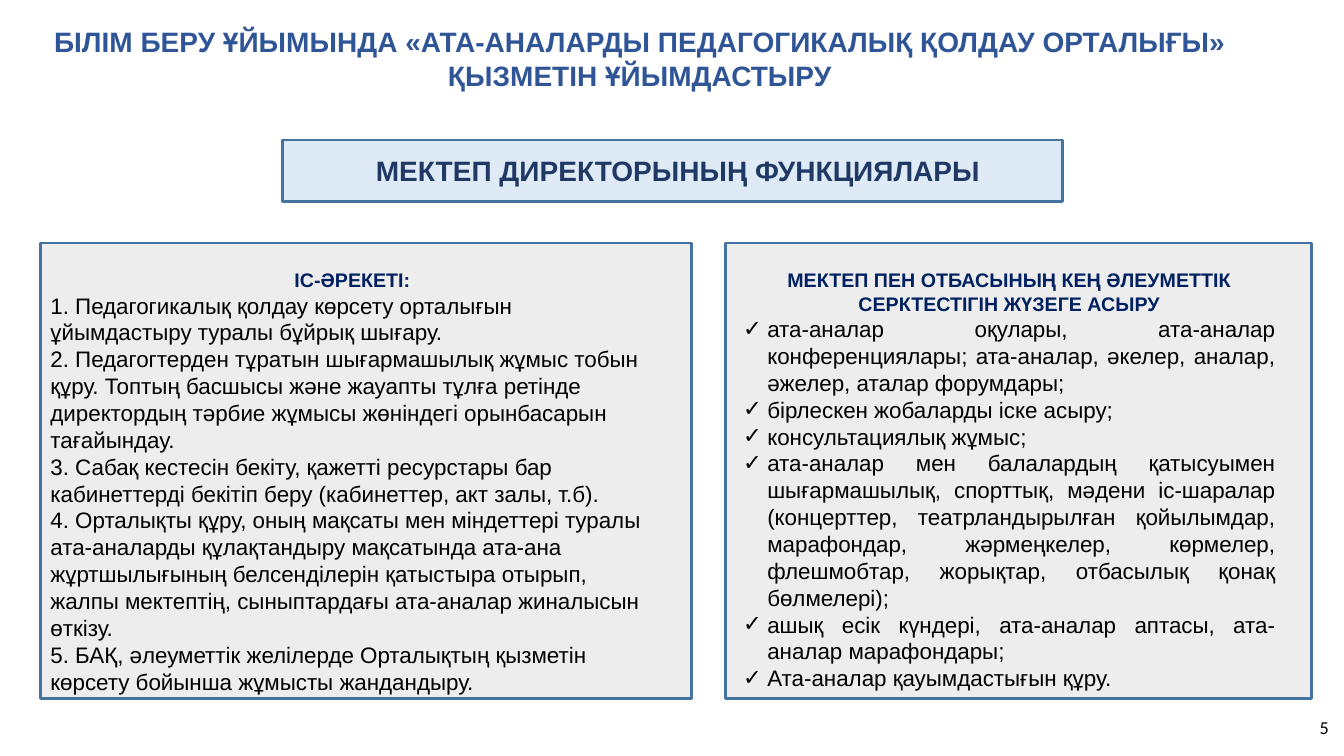
from dataclasses import dataclass
from lxml.etree import SubElement
from pptx import Presentation
from pptx.dml.color import RGBColor
from pptx.enum.shapes import MSO_SHAPE
from pptx.enum.text import MSO_ANCHOR, MSO_AUTO_SIZE, PP_ALIGN
from pptx.oxml.ns import qn
from pptx.util import Inches, Pt

TITLE_BLUE = RGBColor(0x2F, 0x55, 0x97)
BANNER_NAVY = RGBColor(0x20, 0x38, 0x64)
HEADING_NAVY = RGBColor(0x00, 0x20, 0x60)
BLACK = RGBColor(0x00, 0x00, 0x00)
BANNER_FILL = RGBColor(0xDE, 0xEB, 0xF7)
CARD_FILL = RGBColor(0xED, 0xED, 0xED)
BORDER = RGBColor(0x43, 0x73, 0x9E)

SLIDE_W, SLIDE_H = Inches(13.33), Inches(7.5)
CARD_TOP, CARD_H = 32.13, 60.27
LIST_TOP, LIST_H = 34.8, 58.4
BULLET_INDENT = Inches(0.24)


@dataclass(frozen=True)
class Area:
    """Left, top, width and height in percent of the slide."""
    x: float
    y: float
    w: float
    h: float

    def box(self) -> tuple[int, int, int, int]:
        return (int(SLIDE_W * self.x / 100), int(SLIDE_H * self.y / 100),
                int(SLIDE_W * self.w / 100), int(SLIDE_H * self.h / 100))


@dataclass(frozen=True)
class Style:
    size: int
    color: RGBColor
    bold: bool = False
    font: str = "Arial"
    align: PP_ALIGN = PP_ALIGN.LEFT


@dataclass(frozen=True)
class Column:
    card: Area
    text: Area
    heading: str
    items: tuple[str, ...]
    bullet: str = ""


TITLE = Style(20, TITLE_BLUE, True, align=PP_ALIGN.CENTER)
BANNER = Style(20, BANNER_NAVY, True)
HEADING = Style(14, HEADING_NAVY, True, align=PP_ALIGN.CENTER)
STEP = Style(16, BLACK)
CHECK = Style(16, BLACK, align=PP_ALIGN.JUSTIFY)
NUMBER = Style(13, BLACK, font="Calibri", align=PP_ALIGN.RIGHT)

COLUMNS = (
    Column(
        Area(3, CARD_TOP, 48.46, CARD_H), Area(3, LIST_TOP, 46.44, LIST_H),
        "ІС-ӘРЕКЕТІ:",
        ("1. Педагогикалық қолдау көрсету орталығын ұйымдастыру туралы бұйрық шығару.",
         "2. Педагогтерден тұратын шығармашылық жұмыс тобын құру. Топтың басшысы "
         "және жауапты тұлға ретінде директордың тәрбие жұмысы жөніндегі "
         "орынбасарын тағайындау.",
         "3. Сабақ кестесін бекіту, қажетті ресурстары бар кабинеттерді бекітіп "
         "беру (кабинеттер, акт залы, т.б).",
         "4. Орталықты құру, оның мақсаты мен міндеттері туралы ата-аналарды "
         "құлақтандыру мақсатында ата-ана жұртшылығының белсенділерін қатыстыра "
         "отырып, жалпы мектептің, сыныптардағы ата-аналар жиналысын өткізу.",
         "5. БАҚ, әлеуметтік желілерде Орталықтың қызметін көрсету бойынша "
         "жұмысты жандандыру.")),
    Column(
        Area(54.01, CARD_TOP, 43.59, CARD_H), Area(54.54, LIST_TOP, 41.11, LIST_H),
        "МЕКТЕП ПЕН ОТБАСЫНЫҢ КЕҢ ӘЛЕУМЕТТІК СЕРКТЕСТІГІН ЖҮЗЕГЕ АСЫРУ",
        ("ата-аналар оқулары, ата-аналар конференциялары; ата-аналар, әкелер, "
         "аналар, әжелер, аталар форумдары;",
         "бірлескен жобаларды іске асыру;",
         "консультациялық жұмыс;",
         "ата-аналар мен балалардың қатысуымен шығармашылық, спорттық, мәдени "
         "іс-шаралар (концерттер, театрландырылған қойылымдар, марафондар, "
         "жәрмеңкелер, көрмелер, флешмобтар, жорықтар, отбасылық қонақ бөлмелері);",
         "ашық есік күндері, ата-аналар аптасы, ата-аналар марафондары;",
         "Ата-аналар қауымдастығын құру."),
        "✓"),
)


def place(sp, area: Area) -> None:
    sp.left, sp.top, sp.width, sp.height = area.box()


def set_bullet(p, bullet: str) -> None:
    pPr = p._p.get_or_add_pPr()
    indent = BULLET_INDENT if bullet else 0
    pPr.set("marL", str(indent))
    pPr.set("indent", str(-indent))
    if bullet:
        SubElement(SubElement(pPr, qn("a:buClr")), qn("a:srgbClr"), val=str(BLACK))
        SubElement(pPr, qn("a:buFont"), typeface="Arial")
        SubElement(pPr, qn("a:buChar"), char=bullet)
    else:
        SubElement(pPr, qn("a:buNone"))


def write(p, text: str, style: Style, bullet: str = "") -> None:
    set_bullet(p, bullet)
    p.alignment = style.align
    p.space_before = p.space_after = Pt(0)
    r = p.add_run()
    r.text = text
    r.font.name, r.font.size, r.font.bold = style.font, Pt(style.size), style.bold
    r.font.color.rgb = style.color


def prepare(sp, anchor: MSO_ANCHOR):
    tf = sp.text_frame
    tf.word_wrap, tf.auto_size = True, MSO_AUTO_SIZE.NONE
    tf.vertical_anchor = anchor
    return tf


def add_panel(slide, area: Area, fill: RGBColor) -> None:
    sp = slide.shapes.add_shape(MSO_SHAPE.RECTANGLE, *area.box())
    sp.shadow.inherit = False
    sp.fill.solid()
    sp.fill.fore_color.rgb = fill
    sp.line.color.rgb, sp.line.width = BORDER, Pt(2)


def add_label(slide, area: Area, text: str, style: Style, anchor: MSO_ANCHOR) -> None:
    sp = slide.shapes.add_textbox(*area.box())
    write(prepare(sp, anchor).paragraphs[0], text, style)


def fill_column(slide, sp, column: Column) -> None:
    add_panel(slide, column.card, CARD_FILL)
    place(sp, column.text)
    slide.shapes._spTree.append(sp._element)  # bring the list in front of its card
    tf = prepare(sp, MSO_ANCHOR.TOP)
    write(tf.paragraphs[0], column.heading, HEADING)
    for item in column.items:
        write(tf.add_paragraph(), item, CHECK if column.bullet else STEP, column.bullet)


def main() -> None:
    prs = Presentation()
    prs.slide_width, prs.slide_height = SLIDE_W, SLIDE_H
    slide = prs.slides.add_slide(prs.slide_layouts.get_by_name("Two Content"))
    title, *bodies = slide.placeholders

    # Title and slide number
    place(title, Area(2.1, 1.33, 91, 12.8))
    write(prepare(title, MSO_ANCHOR.MIDDLE).paragraphs[0],
          "БІЛІМ БЕРУ ҰЙЫМЫНДА «АТА-АНАЛАРДЫ ПЕДАГОГИКАЛЫҚ ҚОЛДАУ ОРТАЛЫҒЫ» "
          "ҚЫЗМЕТІН ҰЙЫМДАСТЫРУ", TITLE)
    add_label(slide, Area(93.62, 92.4, 6, 7.6), "5", NUMBER, MSO_ANCHOR.MIDDLE)

    # Banner
    add_panel(slide, Area(21, 18.53, 58.06, 8.13), BANNER_FILL)
    add_label(slide, Area(27.23, 19.6, 62.27, 5.87),
              "МЕКТЕП ДИРЕКТОРЫНЫҢ ФУНКЦИЯЛАРЫ", BANNER, MSO_ANCHOR.TOP)

    # Two columns
    for body, column in zip(bodies, COLUMNS):
        fill_column(slide, body, column)

    prs.save("out.pptx")


if __name__ == "__main__":
    main()
